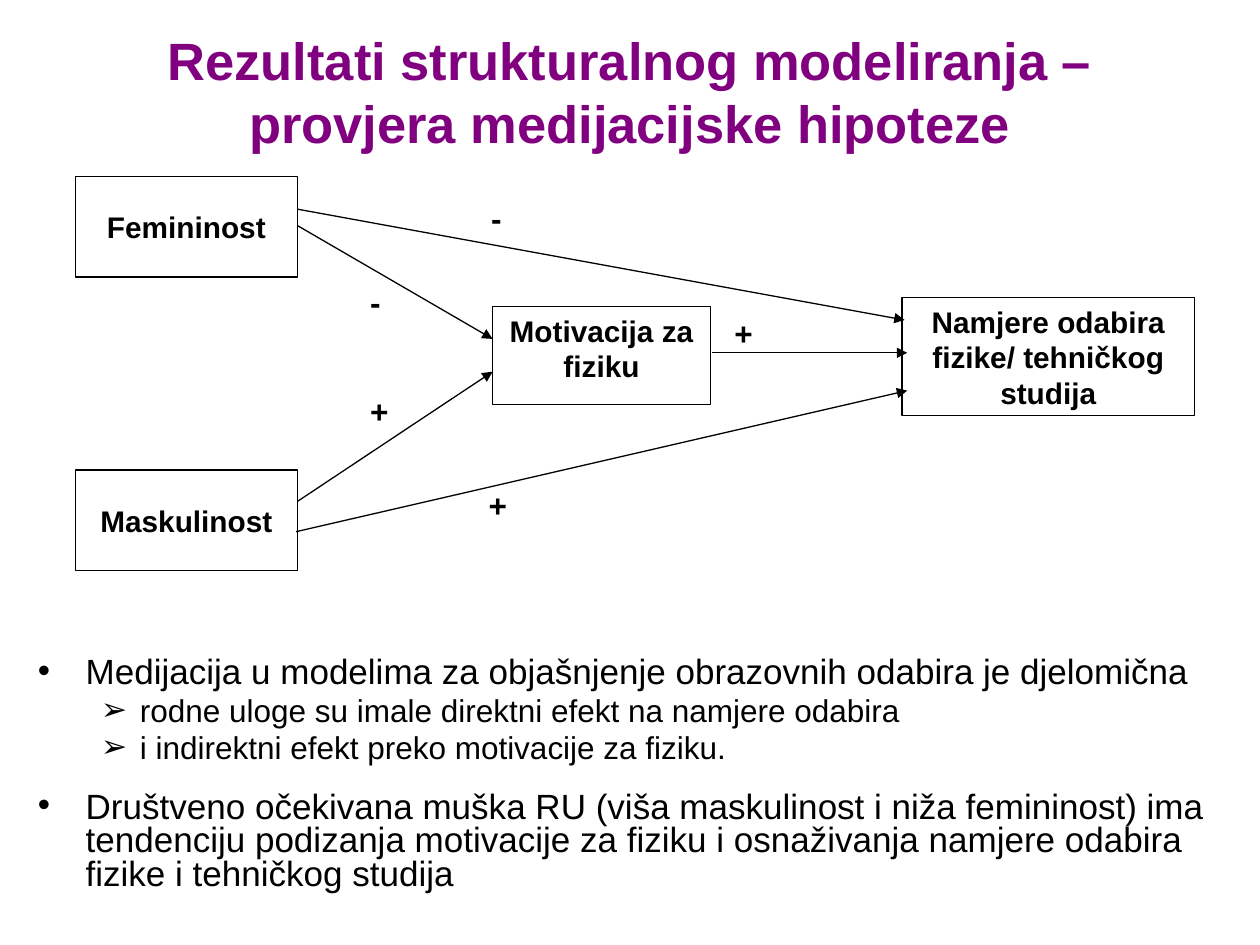
from lxml.etree import SubElement
from pptx import Presentation
from pptx.dml.color import RGBColor
from pptx.enum.shapes import MSO_CONNECTOR, MSO_SHAPE
from pptx.enum.text import MSO_ANCHOR, MSO_AUTO_SIZE, PP_ALIGN
from pptx.oxml.ns import qn
from pptx.util import Inches, Pt

COLORS = {"title": "800080", "ink": "000000", "paper": "FFFFFF"}
FONT = "Arial"
SLIDE_WIDTH, SLIDE_HEIGHT = Inches(10), Inches(7.5)
COLUMNS, ROWS = 100, 75

TITLE = "Rezultati strukturalnog modeliranja – provjera medijacijske hipoteze"
BOXES = [
    ("Femininost", (6, 14, 17.6, 8), MSO_ANCHOR.MIDDLE),
    ("Maskulinost", (6, 37.3, 17.6, 8), MSO_ANCHOR.MIDDLE),
    ("Motivacija za fiziku", (39.1, 24.3, 17.3, 7.8), MSO_ANCHOR.TOP),
    ("Namjere odabira fizike/ tehničkog studija", (71.6, 23.6, 23.2, 9.4), MSO_ANCHOR.TOP),
]
ARROWS = [
    ((23.6, 16.6), (71.8, 25.4)),
    ((23.6, 17.9), (39.1, 26.9)),
    ((23.6, 39.8), (39.1, 29.5)),
    ((23.5, 42.2), (72, 31)),
    ((56.5, 28), (72, 28)),
]
SIGNS = [
    ("-", 38, 15.3),
    ("-", 28.4, 22),
    ("+", 28.4, 30.6),
    ("+", 37.8, 38.1),
    ("+", 57.3, 24.4),
]
FINDINGS = [
    (0, "Medijacija u modelima za objašnjenje obrazovnih odabira je djelomična", 4),
    (1, "rodne uloge su imale direktni efekt na namjere odabira", 4),
    (1, "i indirektni efekt preko motivacije za fiziku.", 4),
    (0, "Društveno očekivana muška RU (viša maskulinost i niža femininost) ima "
        "tendenciju podizanja motivacije za fiziku i osnaživanja namjere odabira "
        "fizike i tehničkog studija", 15),
]
LEVELS = [("•", 20, 0.38, -0.38), ("➢", 18, 0.81, -0.31)]


def across(columns):
    return round(SLIDE_WIDTH * columns / COLUMNS)


def down(rows):
    return round(SLIDE_HEIGHT * rows / ROWS)


def area(left, top, width, height):
    return across(left), down(top), across(width), down(height)


def color(name):
    return RGBColor.from_string(COLORS[name])


def style(paragraph, size, ink="ink", bold=False, align=PP_ALIGN.LEFT):
    font = paragraph.font
    font.name, font.size, font.bold = FONT, Pt(size), bold
    font.color.rgb = color(ink)
    paragraph.alignment = align


def place(placeholder, left, top, width, height):
    placeholder.left, placeholder.top, placeholder.width, placeholder.height = area(
        left, top, width, height)
    frame = placeholder.text_frame
    frame.auto_size = MSO_AUTO_SIZE.NONE
    return frame


def set_bullet(paragraph, mark, margin, indent):
    properties = paragraph._p.get_or_add_pPr()
    properties.set("marL", str(Inches(margin)))
    properties.set("indent", str(Inches(indent)))
    SubElement(properties, qn("a:buFont"), typeface=FONT)
    SubElement(properties, qn("a:buChar"), char=mark)


def fill_title(slide):
    frame = place(slide.shapes.title, 5, 3, 90, 8.5)
    frame.text = TITLE
    style(frame.paragraphs[0], 30, "title", True, PP_ALIGN.CENTER)


def fill_findings(slide):
    frame = place(slide.placeholders[1], 2, 51.7, 96.1, 20.5)
    frame.text = "\n".join(text for _, text, _ in FINDINGS)
    for paragraph, (level, _, gap) in zip(frame.paragraphs, FINDINGS):
        mark, size, margin, indent = LEVELS[level]
        paragraph.level = level
        paragraph.line_spacing = 0.8
        paragraph.space_before = Pt(gap)
        style(paragraph, size)
        set_bullet(paragraph, mark, margin, indent)


def add_box(slide, text, bounds, anchor):
    shape = slide.shapes.add_shape(MSO_SHAPE.RECTANGLE, *area(*bounds))
    shape.shadow.inherit = False
    shape.fill.solid()
    shape.fill.fore_color.rgb = color("paper")
    shape.line.color.rgb = color("ink")
    shape.line.width = Pt(0.75)
    frame = shape.text_frame
    frame.word_wrap = True
    frame.vertical_anchor = anchor
    frame.text = text
    style(frame.paragraphs[0], 17, bold=True, align=PP_ALIGN.CENTER)


def add_arrow(slide, start, end):
    connector = slide.shapes.add_connector(
        MSO_CONNECTOR.STRAIGHT,
        across(start[0]), down(start[1]), across(end[0]), down(end[1]))
    connector.line.color.rgb = color("ink")
    connector.line.width = Pt(0.75)
    SubElement(connector.line._get_or_add_ln(), qn("a:tailEnd"), type="triangle")
    SubElement(connector._element.spPr, qn("a:effectLst"))


def add_sign(slide, text, left, top):
    frame = slide.shapes.add_textbox(*area(left, top, 6, 5.2)).text_frame
    frame.word_wrap = True
    frame.text = text
    style(frame.paragraphs[0], 18, bold=True)


def main():
    presentation = Presentation()
    presentation.slide_width, presentation.slide_height = SLIDE_WIDTH, SLIDE_HEIGHT
    slide = presentation.slides.add_slide(presentation.slide_layouts[1])
    fill_title(slide)
    fill_findings(slide)
    for box in BOXES:
        add_box(slide, *box)
    for arrow in ARROWS:
        add_arrow(slide, *arrow)
    for sign in SIGNS:
        add_sign(slide, *sign)
    presentation.save("out.pptx")


if __name__ == "__main__":
    main()
